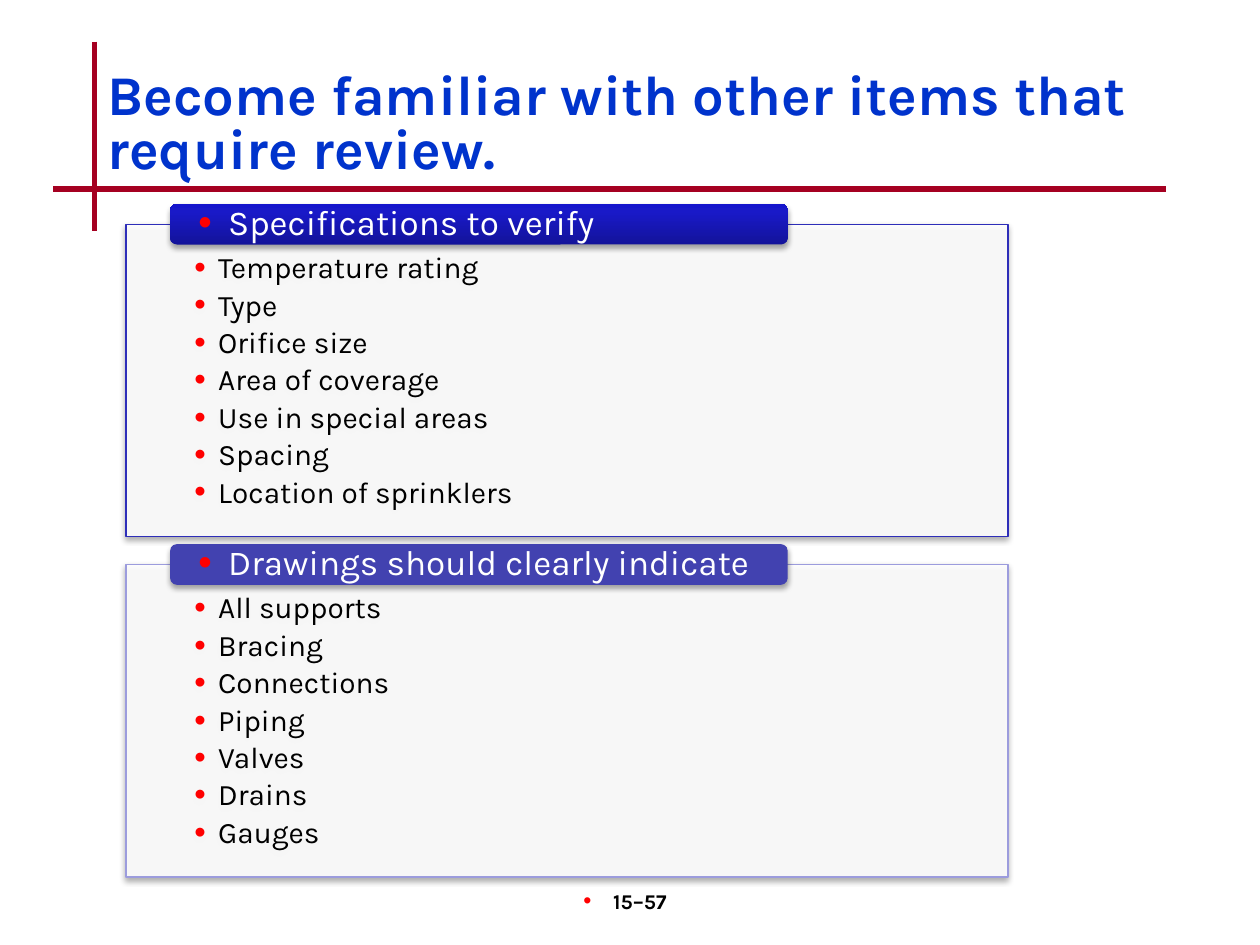
from lxml import etree
from pptx import Presentation
from pptx.dml.color import RGBColor
from pptx.enum.shapes import MSO_CONNECTOR as Connector, MSO_SHAPE as Shape
from pptx.enum.text import MSO_ANCHOR as Anchor, PP_ALIGN as Align
from pptx.oxml import parse_xml
from pptx.oxml.ns import nsdecls, qn
from pptx.util import Cm, Pt

rgb = RGBColor.from_string
SHADOW = f"""<a:effectLst {nsdecls('a')}>
  <a:outerShdw blurRad="39370" dist="22860" dir="5400000" rotWithShape="0">
    <a:srgbClr val="000000"><a:alpha val="35000"/></a:srgbClr>
  </a:outerShdw></a:effectLst>"""
BLUE_GRADIENT = f"""<a:gradFill rotWithShape="1" {nsdecls('a')}><a:gsLst>
  <a:gs pos="0"><a:srgbClr val="13139A"/></a:gs>
  <a:gs pos="80000"><a:srgbClr val="1919C8"/></a:gs>
  <a:gs pos="100000"><a:srgbClr val="1515CC"/></a:gs>
  </a:gsLst><a:lin ang="16200000" scaled="0"/></a:gradFill>"""


def add_bullet(paragraph, indent):
    props = paragraph._p.get_or_add_pPr()
    props.set("marL", str(indent))
    props.set("indent", str(-indent))
    color = etree.SubElement(props, qn("a:buClr"))
    etree.SubElement(color, qn("a:srgbClr"), val="FF0000")
    etree.SubElement(props, qn("a:buSzPct"), val="110000")
    etree.SubElement(props, qn("a:buFont"), typeface="Arial")
    etree.SubElement(props, qn("a:buChar"), char="•")


def style(paragraph, size, color, bold=False, spacing=None, after=0):
    paragraph.line_spacing = spacing
    paragraph.space_before = Pt(0)
    paragraph.space_after = Pt(after)
    for run in paragraph.runs:
        run.font.name = "Karla"
        run.font.size = Pt(size)
        run.font.bold = bold
        run.font.color.rgb = rgb(color)


prs = Presentation()
prs.slide_width, prs.slide_height = Cm(25.4), Cm(19.05)
slide = prs.slides.add_slide(prs.slide_layouts[5])

for x1, y1, x2, y2 in [(1.91, 0.84, 1.91, 4.65), (1.07, 3.81, 23.5, 3.81)]:
    rule = slide.shapes.add_connector(Connector.STRAIGHT, Cm(x1), Cm(y1), Cm(x2), Cm(y2))
    rule.line.color.rgb = rgb("A50021")
    rule.line.width = Pt(3)
    etree.SubElement(rule._element.spPr, qn("a:effectLst"))

title = slide.shapes.title
title.left, title.top, title.width, title.height = Cm(1.91), Cm(1.27), Cm(21.59), Cm(2.54)
title.text_frame.text = "Become familiar with other items that require review."
title.text_frame.vertical_anchor = Anchor.MIDDLE
title.text_frame.paragraphs[0].alignment = Align.LEFT
style(title.text_frame.paragraphs[0], 32, "0033CC", bold=True, spacing=0.8)

sections = [
    ("Specifications to verify", "2E2EB9", None,
     ["Temperature rating", "Type", "Orifice size", "Area of coverage",
      "Use in special areas", "Spacing", "Location of sprinklers"]),
    ("Drawings should clearly indicate", "9C9CDD", "4242B0",
     ["All supports", "Bracing", "Connections", "Piping", "Valves", "Drains", "Gauges"]),
]
for index, (heading, border, tab_color, items) in enumerate(sections):
    top = 4.52 + index * 6.86
    panel = slide.shapes.add_shape(Shape.RECTANGLE, Cm(2.54), Cm(top), Cm(17.78), Cm(6.3))
    panel.fill.solid()
    panel.fill.fore_color.rgb = rgb("FFFFFF")
    white = panel._element.spPr.find(".//" + qn("a:srgbClr"))
    etree.SubElement(white, qn("a:alpha"), val="90000")
    panel.line.color.rgb = rgb(border)
    panel.line.width = Pt(0.75)
    panel._element.spPr.append(parse_xml(SHADOW))
    frame = panel.text_frame
    frame.word_wrap = True
    frame.vertical_anchor = Anchor.TOP
    frame.margin_left = frame.margin_right = Cm(1.38)
    frame.margin_top, frame.margin_bottom = Cm(0.58), Cm(0.33)
    frame.text = "\n".join(items)
    for paragraph in frame.paragraphs:
        paragraph.alignment = Align.LEFT
        add_bullet(paragraph, Cm(0.48))
        style(paragraph, 17, "000000", spacing=0.9, after=3)

    tab = slide.shapes.add_shape(
        Shape.ROUNDED_RECTANGLE, Cm(3.43), Cm(top - 0.41), Cm(12.45), Cm(0.82))
    if tab_color:
        tab.fill.solid()
        tab.fill.fore_color.rgb = rgb(tab_color)
    else:
        tab._element.spPr.append(parse_xml(BLUE_GRADIENT))
    tab.line.fill.background()
    tab._element.spPr.append(parse_xml(SHADOW))
    frame = tab.text_frame
    frame.word_wrap = True
    frame.vertical_anchor = Anchor.MIDDLE
    frame.margin_left = frame.margin_right = Cm(0.53)
    frame.margin_top = frame.margin_bottom = 0
    frame.text = heading
    frame.paragraphs[0].alignment = Align.LEFT
    add_bullet(frame.paragraphs[0], Cm(0.6))
    style(frame.paragraphs[0], 20, "FFFFFF", spacing=0.9)

page = slide.shapes.add_textbox(Cm(9.96), Cm(17.78), Cm(5.28), Cm(1.27))
page.text_frame.word_wrap = True
page.text_frame.text = "15–57"
page_number = page.text_frame.paragraphs[0]
page_number.alignment = Align.CENTER
add_bullet(page_number, Cm(0.6))
style(page_number, 12, "000000", bold=True)

prs.save("out.pptx")
